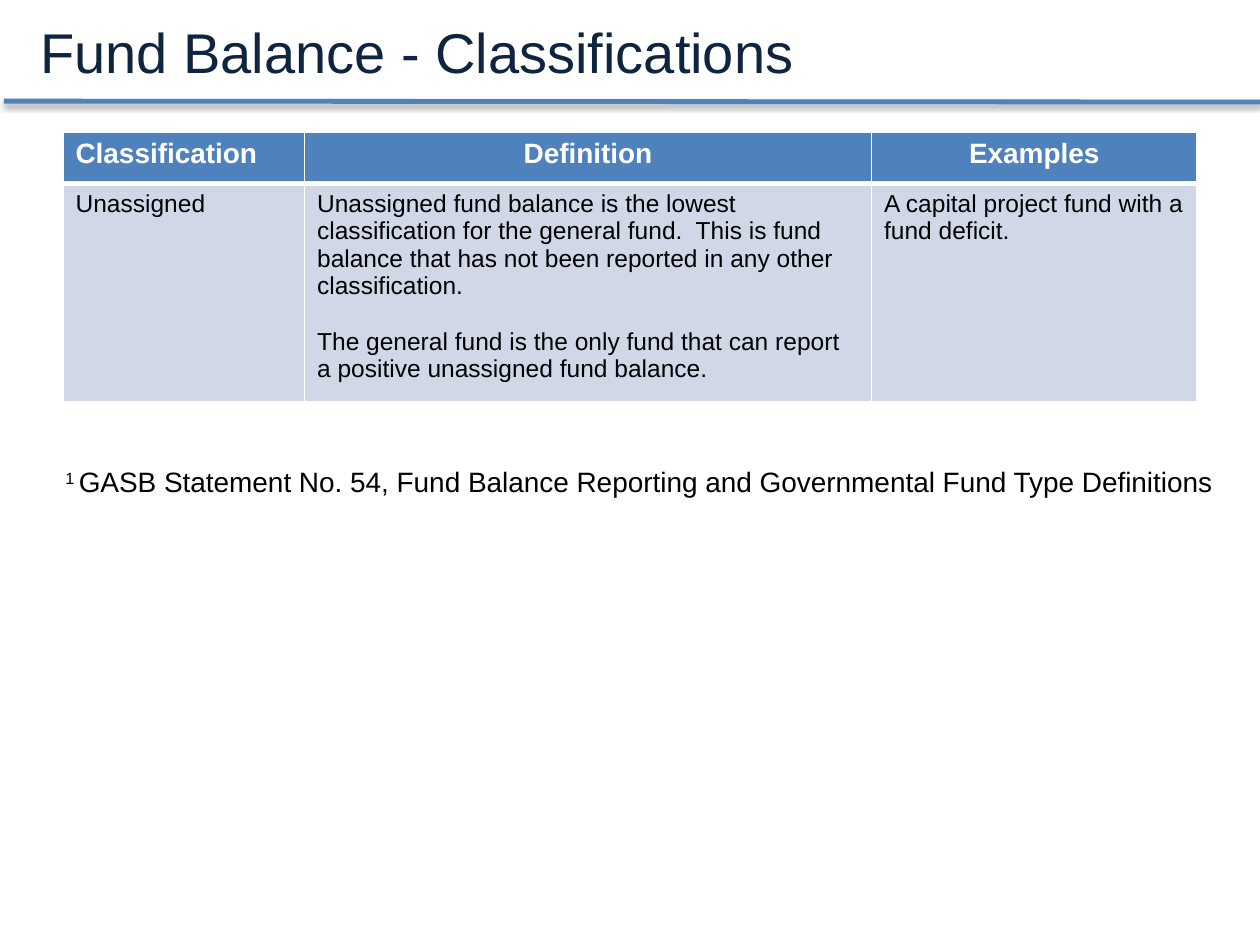
import pptx
import pptx.dml.color
import pptx.enum.shapes
import pptx.enum.text
import pptx.oxml
import pptx.oxml.ns
import pptx.util

RGBColor = pptx.dml.color.RGBColor
NAVY = RGBColor(0x0F, 0x24, 0x3E)
BLUE = RGBColor(0x4F, 0x81, 0xBD)
PALE_BLUE = RGBColor(0xD0, 0xD8, 0xE8)
WHITE = RGBColor(0xFF, 0xFF, 0xFF)
BLACK = RGBColor(0, 0, 0)

LEFT = pptx.enum.text.PP_ALIGN.LEFT
CENTER = pptx.enum.text.PP_ALIGN.CENTER
FONT = "Arial"
SLIDE_WIDTH = pptx.util.Inches(10)
SLIDE_HEIGHT = pptx.util.Inches(7.5)

# Boxes are left, top, width, height as shares of the slide's size.
TITLE_BOX = (0.022, 0.012, 0.624, 0.085)
RULE_BOX = (0.003, 0.107, 0.997, 0.001)
TABLE_BOX = (0.05, 0.14, 0.9, 0.285)
NOTE_BOX = (0.042, 0.485, 0.958, 0.049)

COLUMN_SHARES = (0.213, 0.5, 0.287)
ROW_SHARES = (0.19, 0.81)
HEADINGS = (("Classification", LEFT), ("Definition", CENTER), ("Examples", CENTER))
UNASSIGNED = (
    ["Unassigned"],
    [
        "Unassigned fund balance is the lowest classification for the general fund.  "
        "This is fund balance that has not been reported in any other classification.",
        "The general fund is the only fund that can report a positive unassigned fund balance.",
    ],
    ["A capital project fund with a fund deficit."],
)


def to_lengths(box):
    left, top, width, height = box
    return (
        round(left * SLIDE_WIDTH),
        round(top * SLIDE_HEIGHT),
        round(width * SLIDE_WIDTH),
        round(height * SLIDE_HEIGHT),
    )


def add_run(paragraph, words, size, color, bold=False):
    run = paragraph.add_run()
    run.text = words
    run.font.name = FONT
    run.font.size = pptx.util.Pt(size)
    run.font.bold = bold
    run.font.color.rgb = color
    return run


def place_title(slide, box):
    title = slide.shapes.title
    title.left, title.top, title.width, title.height = to_lengths(box)
    frame = title.text_frame
    frame.word_wrap = False
    frame.auto_size = pptx.enum.text.MSO_AUTO_SIZE.SHAPE_TO_FIT_TEXT
    frame.vertical_anchor = pptx.enum.text.MSO_ANCHOR.TOP
    frame.paragraphs[0].alignment = LEFT
    add_run(frame.paragraphs[0], "Fund Balance - Classifications", 32, NAVY)


def place_rule(slide, box):
    """Draw the line under the title, with its soft shadow."""
    left, top, width, height = to_lengths(box)
    rule = slide.shapes.add_connector(
        pptx.enum.shapes.MSO_CONNECTOR.STRAIGHT, left, top, left + width, top + height
    )
    rule.line.color.rgb = BLUE
    rule.line.width = pptx.util.Pt(2.75)
    rule._element.spPr.append(pptx.oxml.parse_xml(
        f'<a:effectLst {pptx.oxml.ns.nsdecls("a")}>'
        f'<a:outerShdw blurRad="{pptx.util.Pt(3.1)}" dist="{pptx.util.Pt(1.6)}" '
        'dir="5400000" rotWithShape="0"><a:srgbClr val="000000">'
        '<a:alpha val="38000"/></a:srgbClr></a:outerShdw></a:effectLst>'
    ))


def format_cell(cell, fill, top=1, bottom=1):
    """Fill a cell and give it white borders, with widths in points."""
    properties = cell._tc.get_or_add_tcPr()
    for side, width in (("L", 1), ("R", 1), ("T", top), ("B", bottom)):
        properties.append(pptx.oxml.parse_xml(
            f'<a:ln{side} {pptx.oxml.ns.nsdecls("a")} w="{pptx.util.Pt(width)}">'
            f'<a:solidFill><a:srgbClr val="{WHITE}"/></a:solidFill></a:ln{side}>'
        ))
    cell.fill.solid()
    cell.fill.fore_color.rgb = fill


def place_table(slide, box):
    left, top, width, height = to_lengths(box)
    table = slide.shapes.add_table(
        len(ROW_SHARES), len(COLUMN_SHARES), left, top, width, height
    ).table
    for column, share in zip(table.columns, COLUMN_SHARES):
        column.width = round(share * width)
    for row, share in zip(table.rows, ROW_SHARES):
        row.height = round(share * height)

    for index, (heading, alignment) in enumerate(HEADINGS):
        cell = table.cell(0, index)
        format_cell(cell, BLUE, bottom=3)
        paragraph = cell.text_frame.paragraphs[0]
        paragraph.alignment = alignment
        add_run(paragraph, heading, 16, WHITE, bold=True)

    for index, statements in enumerate(UNASSIGNED):
        cell = table.cell(1, index)
        format_cell(cell, PALE_BLUE, top=3)
        frame = cell.text_frame
        for order, statement in enumerate(statements):
            paragraph = frame.add_paragraph() if order else frame.paragraphs[0]
            if order:
                paragraph.space_before = pptx.util.Pt(16)
            add_run(paragraph, statement, 14, BLACK)


def place_note(slide, box):
    frame = slide.shapes.add_textbox(*to_lengths(box)).text_frame
    frame.word_wrap = True
    frame.auto_size = pptx.enum.text.MSO_AUTO_SIZE.SHAPE_TO_FIT_TEXT
    paragraph = frame.paragraphs[0]
    marker = add_run(paragraph, "1 ", 16, BLACK)
    marker.font._element.set("baseline", "30000")
    add_run(
        paragraph,
        "GASB Statement No. 54, Fund Balance Reporting and Governmental Fund Type Definitions",
        16,
        BLACK,
    )


def main():
    presentation = pptx.Presentation()
    presentation.slide_width = SLIDE_WIDTH
    presentation.slide_height = SLIDE_HEIGHT
    slide = presentation.slides.add_slide(
        presentation.slide_layouts.get_by_name("Title Only")
    )
    place_rule(slide, RULE_BOX)
    place_title(slide, TITLE_BOX)
    place_note(slide, NOTE_BOX)
    place_table(slide, TABLE_BOX)
    presentation.save("out.pptx")


if __name__ == "__main__":
    main()
